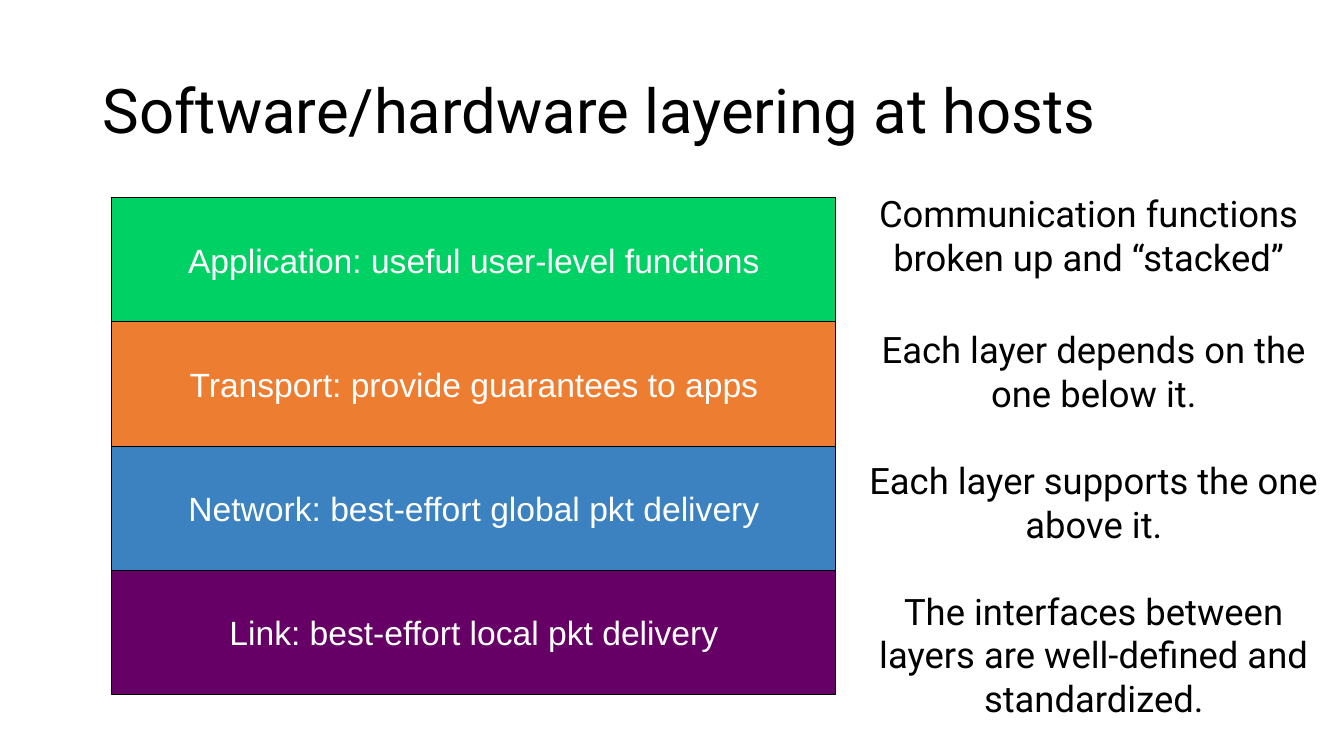
from pptx import Presentation
from pptx.dml.color import RGBColor
from pptx.enum.shapes import MSO_SHAPE as SHAPE
from pptx.enum.text import MSO_ANCHOR as ANCHOR, PP_ALIGN as ALIGN
from pptx.util import Inches, Pt

LAYERS = [
    ("Application: useful user-level functions", "00D164"),
    ("Transport: provide guarantees to apps", "ED7D31"),
    ("Network: best-effort global pkt delivery", "3C82C0"),
    ("Link: best-effort local pkt delivery", "660066"),
]
STACKING = ["Communication functions broken up and “stacked”"]
INTERFACES = [
    "Each layer depends on the one below it.",
    "Each layer supports the one above it.",
    "The interfaces between layers are well-defined and standardized.",
]
TITLE_FONT = {"name": "Roboto", "size": Pt(44)}
NOTE_FONT = {"name": "Roboto", "size": Pt(26)}
LAYER_FONT = {"name": "Arial", "size": Pt(24)}


def rgb(color):
    return RGBColor.from_string(color)


def write(p, text, font, color, align):
    r = p.add_run()
    r.text = text
    for name, value in font.items():
        setattr(r.font, name, value)
    r.font.color.rgb = rgb(color)
    p.alignment = align


def add_title(s, text, x, y, w, h):
    sp = s.shapes.title
    box = {"left": x, "top": y, "width": w, "height": h}
    for name, value in box.items():
        setattr(sp, name, Inches(value))
    tf = sp.text_frame
    tf.vertical_anchor = ANCHOR.MIDDLE
    p = tf.paragraphs[0]
    p.line_spacing = 0.9
    write(p, text, TITLE_FONT, "000000", ALIGN.LEFT)


def add_stack(s, layers, x, y, w, h):
    step = h / len(layers)
    for i, (text, color) in enumerate(layers):
        sp = s.shapes.add_shape(SHAPE.RECTANGLE, Inches(x), Inches(y + i * step),
                                Inches(w), Inches(step))
        sp.shadow.inherit = False
        sp.fill.solid()
        sp.fill.fore_color.rgb = rgb(color)
        sp.line.color.rgb = rgb("000000")
        sp.line.width = Pt(0.75)
        tf = sp.text_frame
        tf.word_wrap = False
        tf.vertical_anchor = ANCHOR.MIDDLE
        write(tf.paragraphs[0], text, LAYER_FONT, "FFFFFF", ALIGN.CENTER)


def add_notes(s, notes, x, y, w, h):
    sp = s.shapes.add_textbox(Inches(x), Inches(y), Inches(w), Inches(h))
    tf = sp.text_frame
    tf.word_wrap = True
    for i, text in enumerate(notes):
        p = tf.add_paragraph() if i else tf.paragraphs[0]
        if i:
            p.space_before = Pt(31)
        write(p, text, NOTE_FONT, "000000", ALIGN.CENTER)


def main():
    prs = Presentation()
    prs.slide_width = Inches(13.33)
    prs.slide_height = Inches(7.5)
    s = prs.slides.add_slide(prs.slide_layouts[5])
    add_title(s, "Software/hardware layering at hosts", 0.92, 0.4, 11.96, 1.45)
    add_stack(s, LAYERS, 1.11, 1.96, 7.18, 4.93)
    add_notes(s, STACKING, 8.46, 1.85, 4.68, 0.98)
    add_notes(s, INTERFACES, 8.51, 3.2, 4.68, 4.04)
    prs.save("out.pptx")


if __name__ == "__main__":
    main()
